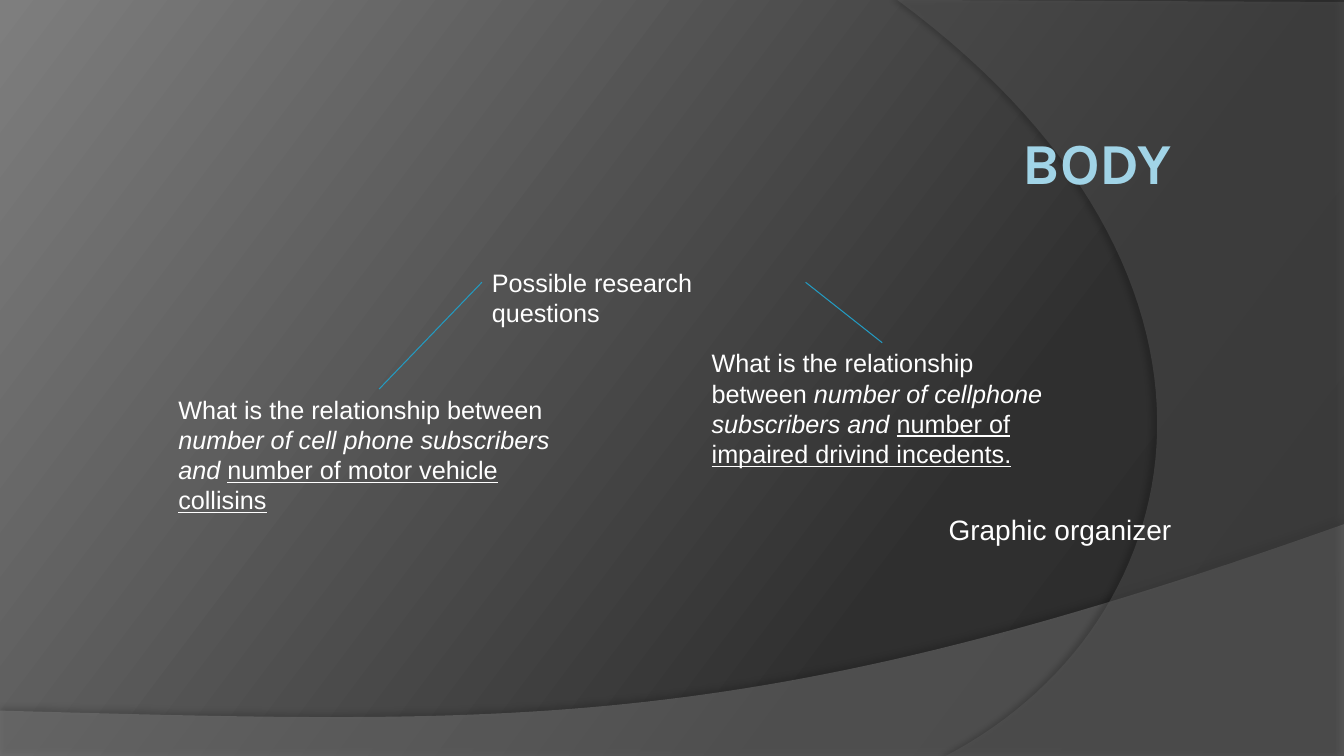
from lxml import etree
from pptx import Presentation, util as u
from pptx.dml.color import RGBColor
from pptx.enum import shapes, text
from pptx.oxml import ns

Inches, Pt = u.Inches, u.Pt
COLORS = {"white": "FFFFFF", "black": "000000", "link": "239BC2", "outline": "5DD4FF",
          "sky": "A1D4E7", "steel": "58808D", "wave": "7F7F7F", "arc": "5E5E5E",
          "coal": "282828", "slate": "2F2F2F", "mist": "7E7E7E"}


def rgb(name):
    return RGBColor.from_string(COLORS[name])


def sub(parent, tag, **attrs):
    return etree.SubElement(parent, ns.qn(tag), {k: str(v) for k, v in attrs.items()})


def add_color(parent, name, opacity=100):
    color = sub(parent, "a:srgbClr", val=COLORS[name])
    if opacity < 100:
        sub(color, "a:alpha", val=opacity * 1000)


def set_gradient(fill, holder, stops, angle):
    """Give a fill any number of (percent, colour) stops; angle is clockwise."""
    fill.gradient()
    grad = holder.find(ns.qn("a:gradFill"))
    for child in list(grad):
        grad.remove(child)
    stop_list = sub(grad, "a:gsLst")
    for percent, name in stops:
        add_color(sub(stop_list, "a:gs", pos=percent * 1000), name)
    sub(grad, "a:lin", ang=angle * 60000, scaled=0)


def curve(p0, p1, p2, p3, steps=60):
    """Points along a cubic curve, in inches."""
    def at(t, axis):
        s = 1 - t
        return (s**3 * p0[axis] + 3 * s * s * t * p1[axis]
                + 3 * s * t * t * p2[axis] + t**3 * p3[axis])
    return [(at(i / steps, 0), at(i / steps, 1)) for i in range(steps + 1)]


def add_backdrop(slide, points, color, opacity, shadow_opacity, distance, direction):
    emu = [(Inches(x), Inches(y)) for x, y in points]
    builder = slide.shapes.build_freeform(*emu[0])
    builder.add_line_segments(emu[1:], close=True)
    panel = builder.convert_to_shape()
    panel.fill.solid()
    panel.fill.fore_color.rgb = rgb(color)
    solid = panel._element.spPr.find(ns.qn("a:solidFill"))
    sub(solid[0], "a:alpha", val=opacity * 1000)
    panel.line.fill.background()
    panel.shadow.inherit = False
    effects = panel._element.spPr.find(ns.qn("a:effectLst"))
    shadow = sub(effects, "a:outerShdw", blurRad=Pt(4), dist=Pt(distance),
                 dir=direction * 60000, algn="ctr", rotWithShape=0)
    add_color(shadow, "black", shadow_opacity)
    return panel


def place(shape, left, top, width, height):
    shape.left, shape.top = Inches(left), Inches(top)
    shape.width, shape.height = Inches(width), Inches(height)


def set_frame(frame, insets, anchor):
    frame.word_wrap = True
    frame.auto_size = text.MSO_AUTO_SIZE.NONE
    frame.vertical_anchor = anchor
    frame.margin_left, frame.margin_top, frame.margin_right, frame.margin_bottom = map(
        Inches, insets)
    frame.paragraphs[0].alignment = text.PP_ALIGN.RIGHT


def add_run(paragraph, words, size, font="Arial"):
    run = paragraph.add_run()
    run.text = words
    run.font.name = font
    run.font.size = Pt(size)
    run.font.color.rgb = rgb("white")
    return run


def add_question(slide, box, plain, italic="", underlined=""):
    question = slide.shapes.add_textbox(*map(Inches, box))
    frame = question.text_frame
    frame.word_wrap = True
    frame.auto_size = text.MSO_AUTO_SIZE.SHAPE_TO_FIT_TEXT
    paragraph = frame.paragraphs[0]
    add_run(paragraph, plain, 18)
    if italic:
        add_run(paragraph, italic, 18).font.italic = True
    if underlined:
        add_run(paragraph, underlined, 18).font.underline = True


def add_link(slide, start, end):
    link = slide.shapes.add_connector(shapes.MSO_CONNECTOR.STRAIGHT,
                                      *map(Inches, start + end))
    link.line.color.rgb = rgb("link")
    link.line.width = Pt(0.75)
    sub(link._element.spPr, "a:effectLst")


def format_heading(title):
    place(title, 1.67, 1.23, 10, 0.77)
    set_frame(title.text_frame, (0.05,) * 4, text.MSO_ANCHOR.BOTTOM)
    heading = add_run(title.text_frame.paragraphs[0], "BODY", 41.4, "Karla")
    heading.font.bold = True
    props = heading._r.get_or_add_rPr()
    set_gradient(heading.font.fill, props,
                 [(0, "sky"), (9, "sky"), (53, "steel"), (90, "sky"), (100, "sky")], 90)
    outline = sub(props, "a:ln", w=Pt(0.39))
    add_color(sub(outline, "a:solidFill"), "outline")
    props.insert(0, outline)


def format_caption(subtitle):
    place(subtitle, 1.67, 2, 10, 3.75)
    set_frame(subtitle.text_frame, (0.1, 0, 0.05, 0.33), text.MSO_ANCHOR.BOTTOM)
    add_run(subtitle.text_frame.paragraphs[0], "Graphic organizer", 20)


def main():
    prs = Presentation()
    prs.slide_width, prs.slide_height = Inches(13.33), Inches(7.5)
    slide = prs.slides.add_slide(prs.slide_layouts[0])

    # Background and its two curved panels, behind the text
    backdrop = slide.background.fill
    set_gradient(backdrop, slide._element.cSld.bg.bgPr,
                 [(0, "coal"), (30, "slate"), (100, "mist")], 217)
    wave = [(0, 7.51), (13.33, 7.51)] + curve((13.33, 5.2), (7.45, 7.29), (5.21, 7.19), (0, 7.05))
    arc = [(13.33, 0.02), (13.33, 7.5)] + curve((9.38, 7.5), (11.88, 6.19), (12.63, 2.75), (8.9, 0))
    panels = [add_backdrop(slide, wave, "wave", 45, 35, 3.5, 270),
              add_backdrop(slide, arc, "arc", 40, 45, 4, 180)]
    for depth, panel in enumerate(panels, start=2):
        slide.shapes._spTree.insert(depth, panel._element)

    # Heading and caption
    format_heading(slide.shapes.title)
    format_caption(slide.placeholders[1])

    # Topic and the two questions under it
    relation = "What is the relationship between "
    add_question(slide, (4.78, 2.6, 3.21, 0.4), "Possible research questions")
    add_question(slide, (1.67, 3.86, 4.19, 1.01), relation,
                 "number of cell phone subscribers and ", "number of motor vehicle collisins")
    add_question(slide, (6.96, 3.4, 3.58, 1.31), relation,
                 "number of cellphone subscribers and ", "number of impaired drivind incedents.")

    # Links from the topic to each question
    add_link(slide, (4.78, 2.8), (3.76, 3.86))
    add_link(slide, (7.99, 2.8), (8.75, 3.4))

    prs.save("out.pptx")


if __name__ == "__main__":
    main()
